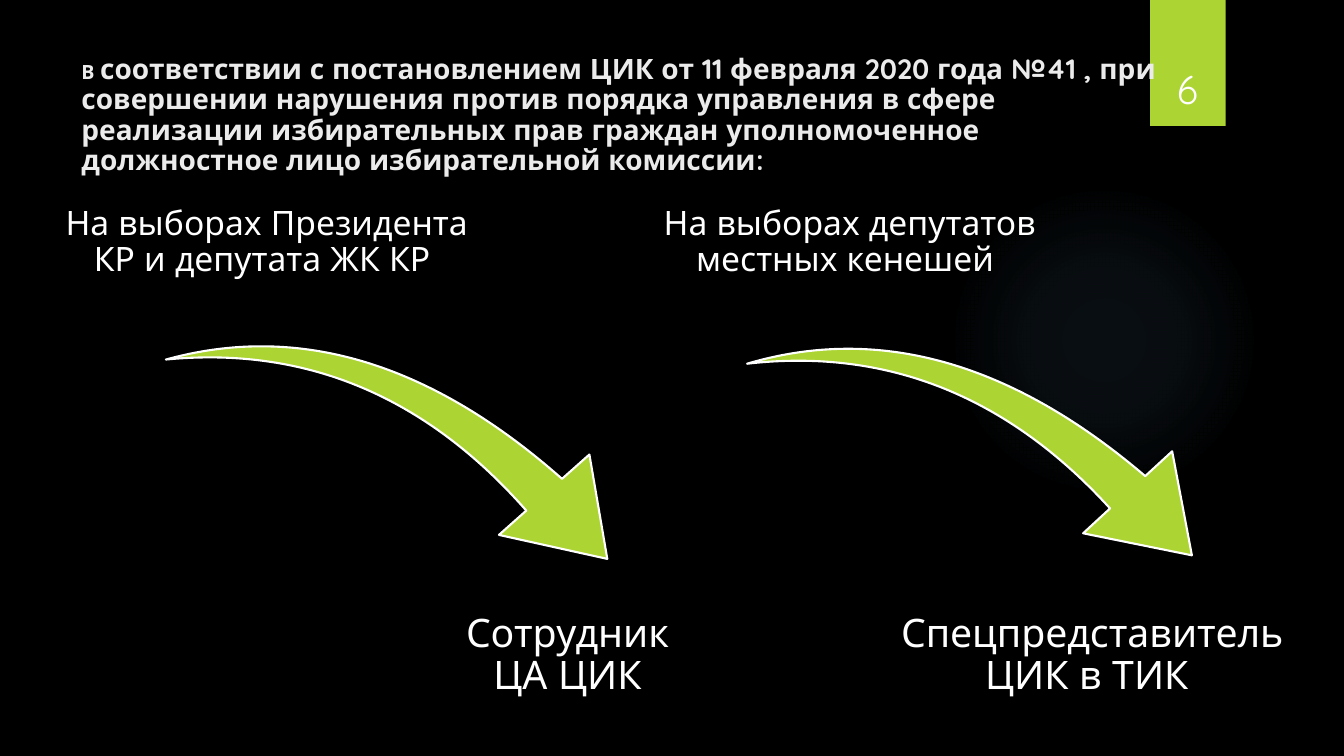
"""Build the slide on who handles election violations at each level."""
import pptx
import pptx.dml.color
import pptx.enum.shapes
import pptx.enum.text
import pptx.oxml
import pptx.oxml.ns
import pptx.util

Pt = pptx.util.Pt
RGBColor = pptx.dml.color.RGBColor
SHAPE = pptx.enum.shapes.MSO_SHAPE
ALIGN = pptx.enum.text.PP_ALIGN
ANCHOR = pptx.enum.text.MSO_ANCHOR

BLACK = RGBColor(0x00, 0x00, 0x00)
WHITE = RGBColor(0xFF, 0xFF, 0xFF)
PALE = RGBColor(0xEB, 0xEB, 0xEB)
LIME = RGBColor(0xAC, 0xD4, 0x33)
SKY = RGBColor(0x7A, 0xC4, 0xF0)


class SlideBuilder:
    """Hold the style and the slide that is being filled."""

    font_name = "Quicksand"

    def __init__(self, slide):
        self.slide = slide
        self.slide.background.fill.solid()
        self.slide.background.fill.fore_color.rgb = BLACK

    def shape(self, shapes, kind, box, color=LIME):
        """Add a filled preset shape without outline."""
        shape = shapes.add_shape(kind, *map(Pt, box))
        shape.shadow.inherit = False
        shape.fill.solid()
        shape.fill.fore_color.rgb = color
        shape.line.fill.background()
        return shape

    def glow(self, box, stops):
        """Add a circle that fades out from its centre."""
        circle = self.shape(self.slide.shapes, SHAPE.OVAL, box)
        stop_xml = "".join(
            f'<a:gs pos="{position * 1000}"><a:srgbClr val="{SKY}">'
            f'<a:alpha val="{alpha * 1000}"/></a:srgbClr></a:gs>'
            for position, alpha in stops
        )
        gradient = pptx.oxml.parse_xml(
            f'<a:gradFill {pptx.oxml.ns.nsdecls("a")}><a:gsLst>{stop_xml}</a:gsLst>'
            '<a:path path="circle"><a:fillToRect l="50000" t="50000" r="50000" b="50000"/>'
            "</a:path></a:gradFill>"
        )
        properties = circle.element.spPr
        solid = properties.find(pptx.oxml.ns.qn("a:solidFill"))
        properties.replace(solid, gradient)

    def arrow(self, shapes, box, rotation):
        """Add an outlined swoosh arrow."""
        arrow = self.shape(shapes, SHAPE.SWOOSH_ARROW, box)
        arrow.adjustments[0] = 0.163
        arrow.adjustments[1] = 0.314
        arrow.rotation = rotation
        arrow.line.color.rgb = WHITE
        arrow.line.width = Pt(1.5)

    def text(self, shapes, box, runs, color=WHITE, align=ALIGN.CENTER,
             anchor=ANCHOR.TOP, spacing=0.9, bold=False, inset=None):
        """Add a text box with one paragraph of (text, size) runs."""
        frame = shapes.add_textbox(*map(Pt, box)).text_frame
        frame.word_wrap = True
        frame.vertical_anchor = anchor
        if inset is not None:
            frame.margin_left = frame.margin_right = Pt(inset)
            frame.margin_top = frame.margin_bottom = Pt(inset)
        paragraph = frame.paragraphs[0]
        paragraph.alignment = align
        paragraph.line_spacing = spacing
        paragraph.font.name = self.font_name
        paragraph.font.color.rgb = color
        paragraph.font.bold = bold
        for content, size in runs:
            run = paragraph.add_run()
            run.text = content
            run.font.size = Pt(size)

    def branch(self, election, election_span, arrow_left, rotation, official, official_span):
        """Add one group: election, arrow and responsible official."""
        shapes = self.slide.shapes.add_group_shape().shapes
        self.arrow(shapes, (arrow_left, 214.6, 298.1, 208.1), rotation)
        left, width = election_span
        self.text(shapes, (left, 146.2, width, 55.4), [(election, 24)],
                  anchor=ANCHOR.BOTTOM, inset=2.4)
        left, width = official_span
        self.text(shapes, (left, 435.6, width, 55.4), [(official, 28)], inset=2.8)


def main():
    """Create the presentation and save it."""
    presentation = pptx.Presentation()
    presentation.slide_width = Pt(960)
    presentation.slide_height = Pt(540)
    slide = presentation.slides.add_slide(presentation.slide_layouts[6])
    builder = SlideBuilder(slide)

    builder.glow((677.5, 131.8, 221.8, 221.8), [(0, 7), (36, 6), (69, 0)])
    builder.shape(slide.shapes, SHAPE.RECTANGLE, (821.5, 0, 54, 90))
    builder.text(
        slide.shapes, (51.1, 36, 786.2, 60.5),
        [("В ", 14),
         ("соответствии с постановлением ЦИК от 11 февраля 2020 года №41 , "
          "при совершении нарушения против порядка управления в сфере "
          "реализации избирательных прав граждан уполномоченное "
          "должностное лицо избирательной комиссии:", 20)],
        color=PALE, align=ALIGN.LEFT, bold=True)
    builder.text(slide.shapes, (815, 23, 66.2, 60.5), [("6", 28)],
                 anchor=ANCHOR.BOTTOM, spacing=1.0)

    builder.branch("На выборах Президента КР и депутата ЖК КР ", (38.2, 304.6),
                   140.4, 54.8, "Сотрудник ЦА ЦИК", (310.3, 190.1))
    builder.branch("На выборах депутатов местных кенешей ", (446.4, 321.1),
                   556.6, 53.8, "Спецпредставитель ЦИК в ТИК ", (619.9, 320.4))
    presentation.save("out.pptx")


if __name__ == "__main__":
    main()
